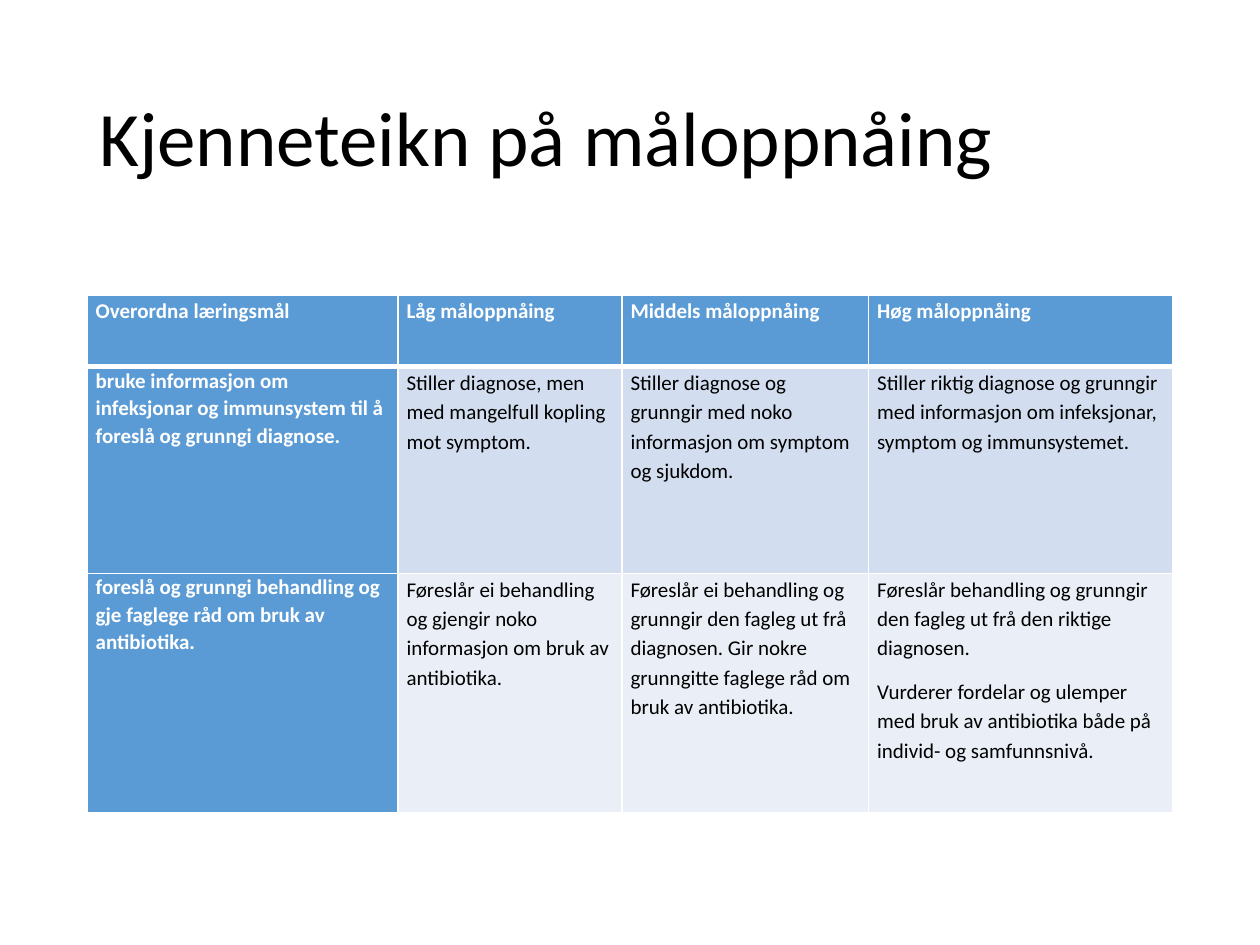
from lxml import etree
from pptx import Presentation
from pptx.dml.color import RGBColor
from pptx.enum.text import MSO_ANCHOR
from pptx.oxml.ns import qn
from pptx.util import Inches, Pt

MIDDLE, TOP = MSO_ANCHOR.MIDDLE, MSO_ANCHOR.TOP
FONT = "Calibri"
BLUE, WHITE, BLACK = "5B9BD5", "FFFFFF", "000000"
BANDS = ["D2DEEF", "EAEFF7"]
WIDTHS = [2.47, 1.78, 1.96, 2.42]
HEIGHTS = [0.57, 1.64, 1.9]
ROWS = [
    ["Overordna læringsmål", "Låg måloppnåing", "Middels måloppnåing", "Høg måloppnåing"],
    [
        "bruke informasjon om infeksjonar og immunsystem til å foreslå og grunngi diagnose.",
        "Stiller diagnose, men med mangelfull kopling mot symptom.",
        "Stiller diagnose og grunngir med noko informasjon om symptom og sjukdom.",
        "Stiller riktig diagnose og grunngir med informasjon om infeksjonar, "
        "symptom og immunsystemet.",
    ],
    [
        "foreslå og grunngi behandling og gje faglege råd om bruk av antibiotika.",
        "Føreslår ei behandling og gjengir noko informasjon om bruk av antibiotika.",
        "Føreslår ei behandling og grunngir den fagleg ut frå diagnosen. "
        "Gir nokre grunngitte faglege råd om bruk av antibiotika.",
        "Føreslår behandling og grunngir den fagleg ut frå den riktige diagnosen.\n"
        "Vurderer fordelar og ulemper med bruk av antibiotika både på individ- og samfunnsnivå.",
    ],
]


def paint(hue):
    """Return the colour for a hex string."""
    return RGBColor.from_string(hue)


def style(frame, size, hue, bold, space, after):
    """Format every paragraph and run of a text frame."""
    for para in frame.paragraphs:
        para.line_spacing = space
        para.space_after = Pt(after)
        for run in para.runs:
            font = run.font
            font.name, font.size, font.bold = FONT, Pt(size), bold
            font.color.rgb = paint(hue)


def edge(cell, sides):
    """Draw white lines of the given widths round a cell."""
    props = cell._tc.get_or_add_tcPr()
    for spot, (side, width) in enumerate(sides.items()):
        line = etree.Element(qn(f"a:ln{side}"), w=str(Pt(width)))
        solid = etree.SubElement(line, qn("a:solidFill"))
        etree.SubElement(solid, qn("a:srgbClr"), val=WHITE)
        props.insert(spot, line)


def add_title(slide, left, top, width, height):
    """Place the heading in its box."""
    frame = slide.shapes.add_textbox(left, top, width, height).text_frame
    frame.word_wrap = True
    frame.vertical_anchor = MIDDLE
    frame.text = "Kjenneteikn på måloppnåing"
    style(frame, 44, BLACK, False, 0.9, 0)


def fill_cell(cell, text, row, col):
    """Write and format one cell by its place in the grid."""
    head = row == 0
    label = head or col == 0
    cell.fill.solid()
    cell.fill.fore_color.rgb = paint(BLUE if label else BANDS[row - 1])
    cell.margin_left = cell.margin_right = Inches(0.07)
    cell.margin_top = cell.margin_bottom = 0
    cell.vertical_anchor = TOP
    cell.text_frame.text = text
    space = 1.07 if col == 0 and not head else 1.15
    style(cell.text_frame, 12, WHITE if label else BLACK, label, space, 8)
    edge(cell, {"L": 1, "R": 1, "T": 3 if row == 1 else 1, "B": 3 if head else 1})


def add_goals(slide, left, top, width, height):
    """Place the table of goals in its box."""
    table = slide.shapes.add_table(
        len(ROWS), len(WIDTHS), left, top, width, height
    ).table
    for col, size in zip(table.columns, WIDTHS):
        col.width = int(width * size / sum(WIDTHS))
    for row, size in zip(table.rows, HEIGHTS):
        row.height = int(height * size / sum(HEIGHTS))
    for row, texts in enumerate(ROWS):
        for col, text in enumerate(texts):
            fill_cell(table.cell(row, col), text, row, col)


def main():
    """Build and save the slide."""
    deck = Presentation()
    deck.slide_width, deck.slide_height = Inches(10), Inches(7.5)
    slide = deck.slides.add_slide(deck.slide_layouts[6])
    left, width = Inches(0.69), Inches(8.62)
    add_title(slide, left, Inches(0.4), width, Inches(1.45))
    add_goals(slide, left, Inches(2.34), width, Inches(4.11))
    deck.save("out.pptx")


if __name__ == "__main__":
    main()
